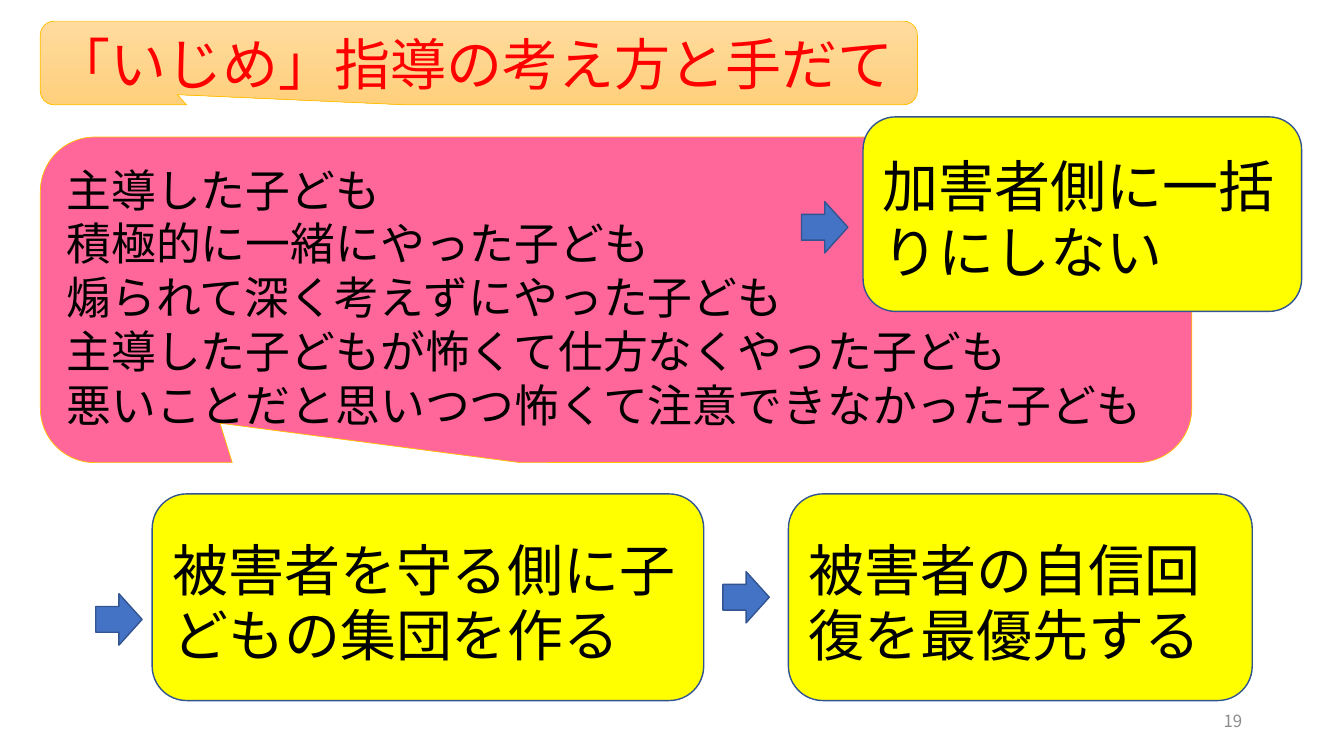
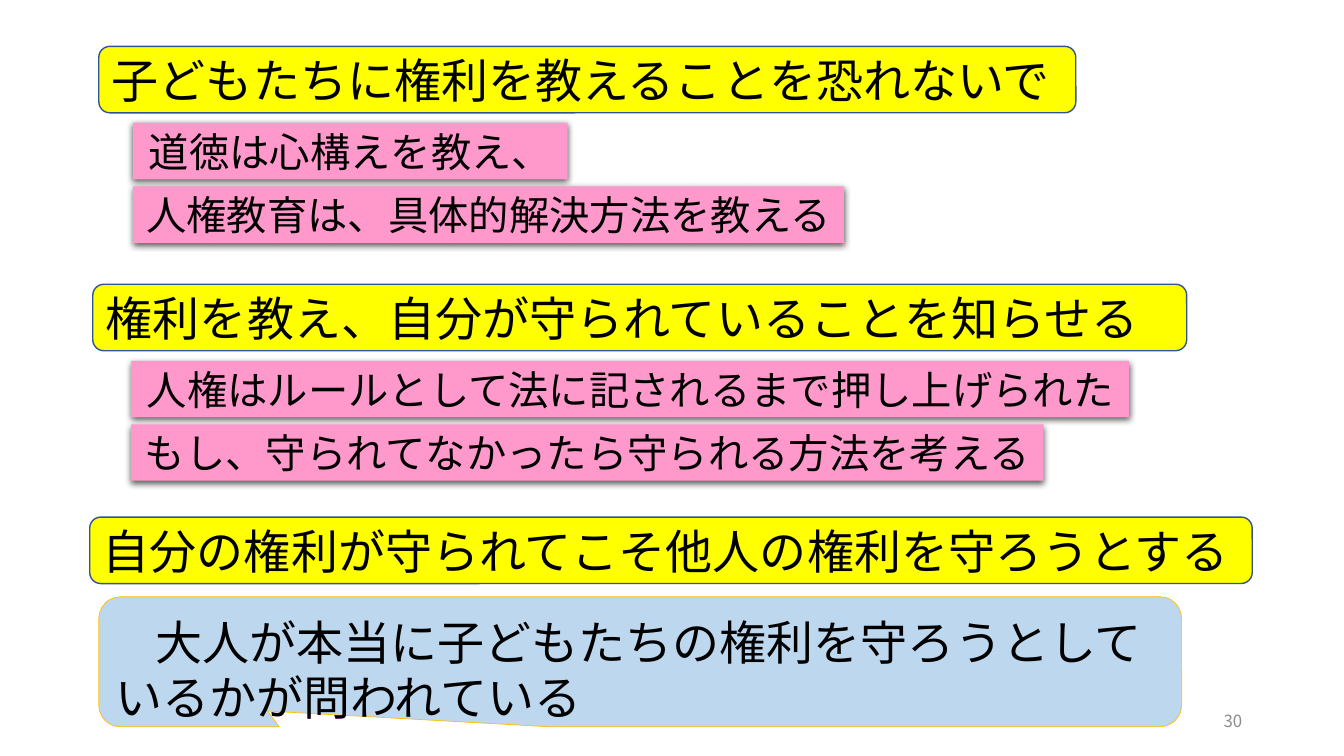
import collections

import pptx
import pptx.dml.color
import pptx.enum.dml
import pptx.enum.lang
import pptx.enum.shapes
import pptx.enum.text
import pptx.oxml.ns
import pptx.oxml.xmlchemy
import pptx.util

Inches, Pt = pptx.util.Inches, pptx.util.Pt
RGBColor = pptx.dml.color.RGBColor
Shape = pptx.enum.shapes.MSO_SHAPE
Align = pptx.enum.text.PP_ALIGN
Anchor = pptx.enum.text.MSO_ANCHOR

FONT = "Noto Sans CJK JP"
BLACK = RGBColor(0x00, 0x00, 0x00)
RED = RGBColor(0xFF, 0x00, 0x00)
GRAY = RGBColor(0x8C, 0x8C, 0x8C)
YELLOW = RGBColor(0xFF, 0xFF, 0x00)
ROSE = RGBColor(0xFF, 0x66, 0x99)
PINK = RGBColor(0xFF, 0x99, 0xCC)
PALE_BLUE = RGBColor(0xBD, 0xD7, 0xEE)
BLUE = RGBColor(0x44, 0x72, 0xC4)
NAVY = RGBColor(0x32, 0x54, 0x91)
GOLD = RGBColor(0xFF, 0xC0, 0x00)
APRICOT_TOP = RGBColor(0xFF, 0xDB, 0x9E)
APRICOT_BOTTOM = RGBColor(0xFF, 0xD0, 0x7C)

SLIDE_WIDTH, SLIDE_HEIGHT = 13.33, 7.5
CALLOUT_ADJUSTMENTS = (-0.344, 0.379, 0.167)
HEADING_HEIGHT, POINT_HEIGHT, POINT_PITCH = 0.66, 0.56, 0.63
ARROW_WIDTH, ARROW_HEIGHT = 0.46, 0.51

Box = collections.namedtuple("Box", "left top width height")


def add_element(parent, tag, **attributes):
    element = pptx.oxml.xmlchemy.OxmlElement(tag)
    for name, value in attributes.items():
        element.set(name, str(value))
    parent.append(element)
    return element


def write_text(shape, text, size, color=BLACK, align=Align.LEFT, anchor=Anchor.MIDDLE,
               line_spacing=1.0, first_indent=0, margins=(0.1, 0, 0.1, 0)):
    """Fill a shape with one paragraph per line; margins run left, top, right, bottom."""
    frame = shape.text_frame
    frame.text = text
    frame.word_wrap = True
    frame.auto_size = pptx.enum.text.MSO_AUTO_SIZE.NONE
    frame.vertical_anchor = anchor
    (frame.margin_left, frame.margin_top,
     frame.margin_right, frame.margin_bottom) = map(Inches, margins)
    for paragraph in frame.paragraphs:
        paragraph.alignment = align
        paragraph.line_spacing = line_spacing
        paragraph.space_before = paragraph.space_after = Pt(0)
        properties = paragraph._p.get_or_add_pPr()
        properties.set("marL", "0")
        properties.set("indent", str(Inches(first_indent)))
        add_element(properties, "a:buNone")
        for run in paragraph.runs:
            run.font.size = Pt(size)
            run.font.name = FONT
            run.font.color.rgb = color
            run.font.language_id = pptx.enum.lang.MSO_LANGUAGE_ID.JAPANESE
            add_element(run._r.get_or_add_rPr(), "a:ea", typeface=FONT)


def add_panel(slide, kind, box, fill, line=None, line_width=1):
    shape = slide.shapes.add_shape(kind, *map(Inches, box))
    shape.shadow.inherit = False
    shape.fill.solid()
    shape.fill.fore_color.rgb = fill
    if line is None:
        shape.line.fill.background()
    else:
        shape.line.color.rgb = line
        shape.line.width = Pt(line_width)
    return shape


def add_callout(slide, box, fill):
    callout = add_panel(slide, Shape.ROUNDED_RECTANGULAR_CALLOUT, box, fill, GOLD, 0.5)
    for index, value in enumerate(CALLOUT_ADJUSTMENTS):
        callout.adjustments[index] = value
    return callout


def place_placeholder(placeholder, panel, box, text, **text_format):
    """Lay a placeholder directly in front of its panel."""
    panel._element.addnext(placeholder._element)
    (placeholder.left, placeholder.top,
     placeholder.width, placeholder.height) = map(Inches, box)
    write_text(placeholder, text, **text_format)


def add_message(slide, box, text):
    panel = add_panel(slide, Shape.ROUNDED_RECTANGLE, box, YELLOW, NAVY)
    write_text(panel, text, size=40, line_spacing=Pt(47), margins=(0.1, 0.1, 0.1, 0))


def add_arrow(slide, left, top):
    add_panel(slide, Shape.RIGHT_ARROW, Box(left, top, ARROW_WIDTH, ARROW_HEIGHT), BLUE, NAVY)


def add_heading(slide, box, text, placeholder=None):
    panel = add_panel(slide, Shape.ROUNDED_RECTANGLE, box, YELLOW, NAVY)
    if placeholder is None:
        write_text(panel, text, size=33.6)
    else:
        place_placeholder(placeholder, panel, box, text, size=33.6,
                          margins=(0.13, 0, 0.1, 0))


def add_point(slide, box, text):
    """Add a pink strip with a soft shadow below it."""
    strip = add_panel(slide, Shape.RECTANGLE, box, PINK)
    write_text(strip, text, size=28.8, align=Align.CENTER)
    effects = strip._element.spPr.find(pptx.oxml.ns.qn("a:effectLst"))
    shadow = add_element(effects, "a:outerShdw", blurRad=Pt(4.5), dist=Pt(1.5),
                         dir=90 * 60000, algn="t", rotWithShape=0)
    shade = add_element(shadow, "a:srgbClr", val=BLACK)
    add_element(shade, "a:alpha", val=63000)


def add_section(slide, heading_box, heading, points_left=0, points=(), placeholder=None):
    """Add a heading bar and, under it, its strips given as (width, text)."""
    add_heading(slide, heading_box, heading, placeholder)
    first_top = heading_box.top + heading_box.height + 0.1
    for row, (width, text) in enumerate(points):
        top = first_top + row * POINT_PITCH
        add_point(slide, Box(points_left, top, width, POINT_HEIGHT), text)


def add_slide_number(slide, number):
    text_box = slide.shapes.add_textbox(*map(Inches, Box(9.42, 6.95, 3, 0.4)))
    write_text(text_box, str(number), size=12, color=GRAY, align=Align.RIGHT)


def build_guidance_slide(presentation):
    slide = presentation.slides.add_slide(presentation.slide_layouts[1])
    title, body = slide.placeholders

    title_box = Box(0.4, 0.21, 8.7, 0.83)
    title_panel = add_callout(slide, title_box, APRICOT_TOP)
    title_panel.fill.gradient()
    title_panel.fill.gradient_angle = 270
    for stop, color, position in zip(title_panel.fill.gradient_stops,
                                     (APRICOT_TOP, APRICOT_BOTTOM), (0, 1)):
        stop.color.rgb = color
        stop.position = position
    place_placeholder(title, title_panel, title_box, "「いじめ」指導の考え方と手だて",
                      size=40, color=RED, margins=(0.14, 0, 0.1, 0))

    children_box = Box(0.4, 1.36, 11.42, 3.23)
    children_panel = add_callout(slide, children_box, ROSE)
    children = (
        "主導した子ども",
        "積極的に一緒にやった子ども",
        "煽られて深く考えずにやった子ども",
        "主導した子どもが怖くて仕方なくやった子ども",
        "悪いことだと思いつつ怖くて注意できなかった子ども",
    )
    place_placeholder(body, children_panel, children_box, "\n".join(children), size=32,
                      anchor=Anchor.TOP, line_spacing=Pt(38.4),
                      margins=(0.26, 0.25, 0.1, 0))

    add_message(slide, Box(8.56, 1.16, 4.35, 1.93), "加害者側に一括りにしない")
    add_message(slide, Box(1.51, 4.9, 5.47, 2.05), "被害者を守る側に子どもの集団を作る")
    add_message(slide, Box(7.82, 4.9, 4.6, 2.05), "被害者の自信回復を最優先する")
    for left, top in ((0.95, 5.89), (7.17, 5.67), (7.95, 2)):
        add_arrow(slide, left, top)
    add_slide_number(slide, 19)


def build_rights_slide(presentation):
    slide = presentation.slides.add_slide(presentation.slide_layouts[5])
    add_section(slide, Box(0.98, 0.46, 9.69, HEADING_HEIGHT),
                "子どもたちに権利を教えることを恐れないで", 1.32,
                ((4.31, "道徳は心構えを教え、"),
                 (7.05, "人権教育は、具体的解決方法を教える")),
                placeholder=slide.shapes.title)
    add_section(slide, Box(0.92, 2.82, 10.85, HEADING_HEIGHT),
                "権利を教え、自分が守られていることを知らせる", 1.3,
                ((9.9, "人権はルールとして法に記されるまで押し上げられた"),
                 (9.05, "もし、守られてなかったら守られる方法を考える")))
    add_section(slide, Box(0.89, 5.13, 11.53, HEADING_HEIGHT),
                "自分の権利が守られてこそ他人の権利を守ろうとする")
    question = add_callout(slide, Box(0.98, 5.92, 10.74, 1.29), PALE_BLUE)
    write_text(question, "大人が本当に子どもたちの権利を守ろうとしているかが問われている",
               size=33.6, anchor=Anchor.TOP, line_spacing=Pt(39), first_indent=0.4,
               margins=(0.1, 0.12, 0.1, 0))
    add_slide_number(slide, 30)


def main():
    presentation = pptx.Presentation()
    presentation.slide_width = Inches(SLIDE_WIDTH)
    presentation.slide_height = Inches(SLIDE_HEIGHT)
    build_guidance_slide(presentation)
    build_rights_slide(presentation)
    presentation.save("out.pptx")


if __name__ == "__main__":
    main()
